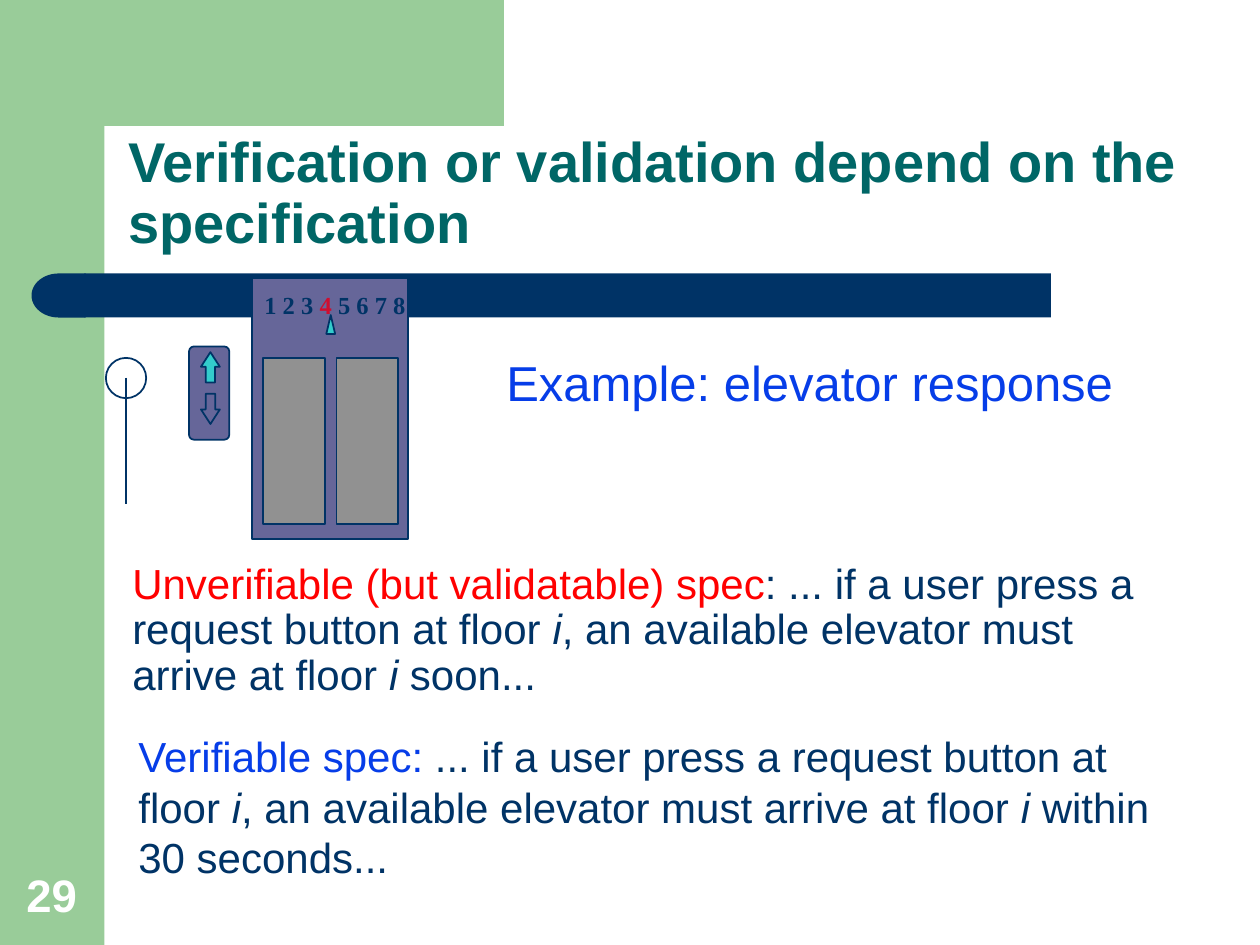
import math
from dataclasses import dataclass
from typing import Optional

import pptx
import pptx.dml.color
import pptx.enum.shapes
import pptx.enum.text
import pptx.util

Inches = pptx.util.Inches
Shape = pptx.enum.shapes.MSO_SHAPE
Anchor = pptx.enum.text.MSO_ANCHOR
Align = pptx.enum.text.PP_ALIGN


@dataclass(frozen=True)
class Theme:
    green: str = "99CC99"
    navy: str = "003366"
    teal: str = "006666"
    purple: str = "666699"
    door: str = "919191"
    lit: str = "33CCCC"
    blue: str = "063DE8"
    red: str = "FF0000"
    floor_red: str = "CF0E30"
    white: str = "FFFFFF"
    sans: str = "Arial"
    serif: str = "Times New Roman"
    title_size: int = 32
    example_size: int = 28
    number_size: int = 26
    spec_size: int = 24
    floor_size: int = 14
    outline: int = 1


THEME = Theme()


@dataclass(frozen=True)
class Box:
    left: float
    top: float
    width: float
    height: float

    def lengths(self) -> list:
        return [Inches(v) for v in (self.left, self.top, self.width, self.height)]


@dataclass(frozen=True)
class Part:
    kind: Shape
    box: Box
    fill: Optional[str] = None
    outlined: bool = True
    rotation: int = 0
    adjustments: tuple = ()


@dataclass(frozen=True)
class Run:
    text: str
    color: str = THEME.navy
    italic: bool = False


@dataclass(frozen=True)
class Label:
    box: Box
    runs: tuple
    size: int
    font: str = THEME.sans
    bold: bool = False
    anchor: Anchor = Anchor.TOP
    align: Align = Align.LEFT
    line_spacing: float = 1.0
    margin_left: float = 0.1


def rgb(color: str) -> pptx.dml.color.RGBColor:
    return pptx.dml.color.RGBColor.from_string(color)


def paint(shape, fill: Optional[str], outlined: bool) -> None:
    shape.shadow.inherit = False
    if fill:
        shape.fill.solid()
        shape.fill.fore_color.rgb = rgb(fill)
    else:
        shape.fill.background()
    if outlined:
        shape.line.color.rgb = rgb(THEME.navy)
        shape.line.width = pptx.util.Pt(THEME.outline)
    else:
        shape.line.fill.background()


def draw_part(slide, part: Part) -> None:
    shape = slide.shapes.add_shape(part.kind, *part.box.lengths())
    for index, value in enumerate(part.adjustments):
        shape.adjustments[index] = value
    shape.rotation = part.rotation
    paint(shape, part.fill, part.outlined)


def draw_outline(slide, points: list, fill: Optional[str] = None) -> None:
    """Draw a closed filled area, or an open stroke when no fill is given."""
    (x, y), *rest = points
    builder = slide.shapes.build_freeform(x, y, scale=Inches(1))
    builder.add_line_segments(rest, close=fill is not None)
    paint(builder.convert_to_shape(), fill, outlined=fill is None)


def draw_label(slide, label: Label) -> None:
    frame = slide.shapes.add_textbox(*label.box.lengths()).text_frame
    frame_format = {
        "word_wrap": True,
        "vertical_anchor": label.anchor,
        "margin_left": Inches(label.margin_left),
    }
    for name, value in frame_format.items():
        setattr(frame, name, value)
    paragraph = frame.paragraphs[0]
    paragraph.alignment = label.align
    paragraph.line_spacing = label.line_spacing
    for piece in label.runs:
        run = paragraph.add_run()
        run.text = piece.text
        font_format = {
            "name": label.font,
            "size": pptx.util.Pt(label.size),
            "bold": label.bold,
            "italic": piece.italic,
        }
        for name, value in font_format.items():
            setattr(run.font, name, value)
        run.font.color.rgb = rgb(piece.color)


def draw_background(slide) -> None:
    draw_part(slide, Part(Shape.RECTANGLE, Box(0, 0, 0.83, 7.5), THEME.green, False))
    radius, edge = 0.33, 0.83
    center = edge + radius
    angles = [math.radians(a) for a in range(0, 91, 6)]
    corner = [(center - radius * math.sin(a), center - radius * math.cos(a)) for a in angles]
    draw_outline(
        slide,
        [(3.5, 0), (3.5, edge), *corner, (edge, 1.28), (0.5, 1.28), (0.5, 0)],
        THEME.green,
    )
    draw_part(slide, Part(Shape.RECTANGLE, Box(0.67, 2.17, 7.67, 0.35), THEME.navy, False))
    draw_part(slide, Part(Shape.FLOWCHART_DELAY, Box(0.25, 2.17, 0.43, 0.35),
                          THEME.navy, False, rotation=180))


def draw_person(slide) -> None:
    draw_part(slide, Part(Shape.OVAL, Box(0.84, 2.84, 0.32, 0.32)))
    middle = 0.995
    for side in (-1, 1):
        hand, body = middle + side * 0.335, middle + side * 0.085
        draw_outline(slide, [(hand, 3.16), (body, 3.34), (body, 4.07), (hand, 4.16)])


def draw_elevator(slide) -> None:
    draw_part(slide, Part(Shape.ROUNDED_RECTANGLE, Box(1.5, 2.75, 0.32, 0.74),
                          THEME.purple, adjustments=(0.125,)))
    draw_part(slide, Part(Shape.RECTANGLE, Box(2, 2.21, 1.24, 2.07), THEME.purple))
    for left in (2.09, 2.67):
        draw_part(slide, Part(Shape.RECTANGLE, Box(left, 2.84, 0.49, 1.32), THEME.door))
    for top, rotation, fill in ((2.84, 270, THEME.lit), (3.17, 90, None)):
        draw_part(slide, Part(Shape.RIGHT_ARROW, Box(1.55, top, 0.24, 0.15), fill,
                              rotation=rotation, adjustments=(0.5, 0.77)))
    floors = (Run("1 2 3 "), Run("4 ", THEME.floor_red), Run("5 6 7 8"))
    draw_label(slide, Label(Box(2, 2.25, 1.33, 0.33), floors, THEME.floor_size,
                            THEME.serif, bold=True))
    draw_part(slide, Part(Shape.ISOSCELES_TRIANGLE, Box(2.59, 2.5, 0.07, 0.15), THEME.lit))


def spec_runs(heading: Run, opening: str, ending: str) -> tuple:
    floor = Run("i", italic=True)
    return (heading, Run(opening + "... if a user press a request button at floor "), floor,
            Run(", an available elevator must arrive at floor "), floor, Run(ending))


def main() -> None:
    deck = pptx.Presentation()
    deck.slide_width, deck.slide_height = Inches(10), Inches(7.5)
    slide = deck.slides.add_slide(deck.slide_layouts[6])
    draw_background(slide)
    unverifiable = spec_runs(Run("Unverifiable (but validatable) spec", THEME.red),
                             ": ", " soon...")
    verifiable = spec_runs(Run("Verifiable spec: ", THEME.blue), "", " within 30 seconds...")
    labels = (
        Label(Box(0.09, 6.83, 0.64, 0.53), (Run("29", THEME.white),), THEME.number_size,
              bold=True, anchor=Anchor.BOTTOM, align=Align.CENTER),
        Label(Box(0.92, 0.92, 8.67, 1.25),
              (Run("Verification or validation depend on the specification", THEME.teal),),
              THEME.title_size, bold=True, anchor=Anchor.MIDDLE, line_spacing=0.9),
        Label(Box(0.58, 4.42, 8.67, 1.42), unverifiable, THEME.spec_size,
              line_spacing=0.9, margin_left=0.47),
        Label(Box(3.92, 2.75, 5.91, 0.56), (Run("Example: elevator response", THEME.blue),),
              THEME.example_size),
        Label(Box(1, 5.75, 8.58, 1.31), verifiable, THEME.spec_size),
    )
    for label in labels:
        draw_label(slide, label)
    draw_person(slide)
    draw_elevator(slide)
    deck.save("out.pptx")


if __name__ == "__main__":
    main()
